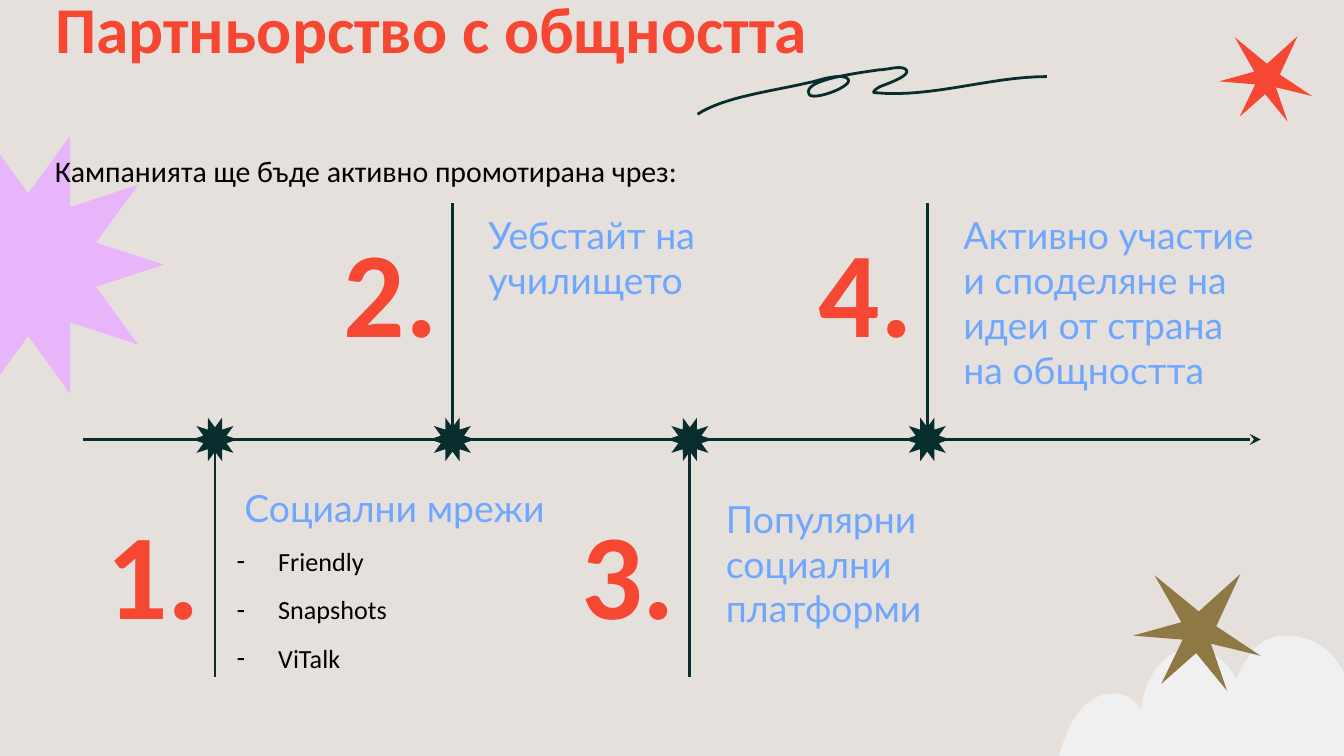
"""Build the community partnership slide with its four-step timeline."""
from dataclasses import dataclass
from math import cos, pi, sin

from lxml import etree
from pptx import Presentation
from pptx.dml.color import RGBColor
from pptx.enum import shapes, text
from pptx.oxml import ns
from pptx.util import Inches, Pt

Point = tuple[float, float]

RED, BLUE, DARK, BLACK = "F54731", "6FA7FF", "072E2D", "000000"
LILAC, CLOUD, OLIVE, SAND = "E8B4FA", "F0F0F0", "8E7945", "E6E0DC"
SLIDE_WIDTH = 10
AXIS_Y = 3.27
FIRST_X, STEP_X = 1.6, 5.3 / 3

SIX_POINT_STAR = [
    (0.80, 0), (0.49, 0.28), (0.16, 0.01), (0.36, 0.36), (0, 0.46), (0.37, 0.49),
    (0.21, 0.82), (0.47, 0.59), (0.70, 0.87), (0.58, 0.52), (0.95, 0.61), (0.62, 0.39),
]
CLOUD_CURVES = [
    (9.51, 4.73, 9.46, 4.74, 9.41, 4.77), (9.32, 4.82, 9.25, 4.94, 9.2, 5.05),
    (9.13, 4.91, 9, 4.83, 8.87, 4.83), (8.84, 4.83, 8.81, 4.83, 8.78, 4.84),
    (8.63, 4.89, 8.51, 5.07, 8.49, 5.28), (8.44, 5.2, 8.37, 5.16, 8.29, 5.16),
    (8.21, 5.16, 8.13, 5.19, 8.07, 5.25), (7.96, 5.36, 7.9, 5.53, 7.86, 5.71),
    (8.6, 5.71, 9.35, 5.71, 10.1, 5.71), (10.1, 5.57, 10.1, 5.43, 10.08, 5.29),
    (10.06, 5.14, 10.02, 5.01, 9.94, 4.91), (9.85, 4.8, 9.73, 4.74, 9.6, 4.73),
]
SQUIGGLE_CURVES = [
    (5.39, 0.72, 5.74, 0.68, 6.04, 0.61), (6.12, 0.59, 6.24, 0.55, 6.3, 0.58),
    (6.39, 0.63, 6.04, 0.76, 6.02, 0.7), (5.97, 0.6, 6.33, 0.55, 6.54, 0.52),
    (6.6, 0.52, 6.68, 0.49, 6.73, 0.51), (6.8, 0.55, 6.64, 0.61, 6.56, 0.64),
    (6.53, 0.65, 6.48, 0.69, 6.51, 0.69), (6.94, 0.73, 7.36, 0.57, 7.79, 0.57),
]


@dataclass
class Milestone:
    label: str
    label_top: float
    stem_end: float
    number_top: float
    label_gap: float = 0.17


MILESTONES = [
    Milestone("Социални мрежи", 3.51, 5.04, 3.61, 0.12),
    Milestone("Уебстайт на\nучилището", 1.48, 1.51, 1.51),
    Milestone("Популярни социални платформи", 3.59, 5.04, 3.61),
    Milestone("Активно участие\nи споделяне на идеи от страна на общността", 1.48, 1.51, 1.51),
]


def color(value: str) -> RGBColor:
    return RGBColor.from_string(value)


def star_points(x: float, y: float, outer: float, inner: float) -> list[Point]:
    radii = [inner, outer] * 10
    return [(x + r * sin(i * pi / 10), y - r * cos(i * pi / 10)) for i, r in enumerate(radii)]


def scaled_star(left: float, top: float, scale: float) -> list[Point]:
    return [(left + x * scale, top + y * scale) for x, y in SIX_POINT_STAR]


def curve_points(start: Point, curves: list[tuple], steps: int = 16) -> list[Point]:
    points = [start]
    for x1, y1, x2, y2, x3, y3 in curves:
        x0, y0 = points[-1]
        for i in range(1, steps + 1):
            t = i / steps
            a, b, c, d = (1 - t) ** 3, 3 * t * (1 - t) ** 2, 3 * t * t * (1 - t), t**3
            points.append((a * x0 + b * x1 + c * x2 + d * x3, a * y0 + b * y1 + c * y2 + d * y3))
    return points


def add_outline(slide, points: list[Point], fill: str | None = None, line: str | None = None):
    start, *rest = [(Inches(x), Inches(y)) for x, y in points]
    builder = slide.shapes.build_freeform(*start)
    builder.add_line_segments(rest, close=fill is not None)
    shape = builder.convert_to_shape()
    shape.shadow.inherit = False
    if fill:
        shape.fill.solid()
        shape.fill.fore_color.rgb = color(fill)
    else:
        shape.fill.background()
    if line:
        shape.line.color.rgb = color(line)
        shape.line.width = Pt(1.5)
    else:
        shape.line.fill.background()


def add_line(slide, start: Point, end: Point, arrow: bool = False):
    line = slide.shapes.add_connector(shapes.MSO_CONNECTOR.STRAIGHT, *map(Inches, start + end))
    line.line.color.rgb = color(DARK)
    line.line.width = Pt(1.5)
    properties = line._element.spPr
    if arrow:
        etree.SubElement(properties.find(ns.qn("a:ln")), ns.qn("a:tailEnd"), type="stealth")
    etree.SubElement(properties, ns.qn("a:effectLst"))


def place(shape, left: float, top: float, width: float, height: float):
    shape.left, shape.top = Inches(left), Inches(top)
    shape.width, shape.height = Inches(width), Inches(height)


def write(shape, content: str, size: float, font: str, hue: str, bold: bool = False,
          align=text.PP_ALIGN.LEFT, inset: float = 0.1, spaced: bool = False, bullet: str = ""):
    frame = shape.text_frame
    frame.text = content
    frame.word_wrap = True
    frame.auto_size = text.MSO_AUTO_SIZE.NONE
    frame.margin_left = frame.margin_right = Inches(0.1)
    frame.margin_top = frame.margin_bottom = Inches(inset)
    for paragraph in frame.paragraphs:
        paragraph.alignment = align
        if spaced:
            paragraph.line_spacing = 1.07
            paragraph.space_before, paragraph.space_after = Pt(0), Pt(8)
        if bullet:
            properties = paragraph._p.get_or_add_pPr()
            properties.set("marL", str(Inches(0.31)))
            properties.set("indent", str(Inches(-0.31)))
            etree.SubElement(properties, ns.qn("a:buChar"), char=bullet)
        paragraph.font.size = Pt(size)
        paragraph.font.name = font
        paragraph.font.bold = bold
        paragraph.font.color.rgb = color(hue)


def add_text(slide, box: tuple, content: str, *args, **options):
    write(slide.shapes.add_textbox(*map(Inches, box)), content, *args, **options)


def add_milestone(slide, index: int, milestone: Milestone):
    x = FIRST_X + index * STEP_X
    add_text(slide, (x - 0.95, milestone.number_top, 0.94, 1.11), f"{index + 1}.",
             65, "Calibri", RED, bold=True, align=text.PP_ALIGN.RIGHT)
    add_text(slide, (x + milestone.label_gap, milestone.label_top, 2.44, 0.87),
             milestone.label, 20, "Lato", BLUE)
    add_line(slide, (x, AXIS_Y), (x, milestone.stem_end))
    add_outline(slide, star_points(x, AXIS_Y, 0.17, 0.09), DARK)


def main():
    presentation = Presentation()
    presentation.slide_width = Inches(SLIDE_WIDTH)
    presentation.slide_height = Inches(SLIDE_WIDTH * 9 / 16)
    slide = presentation.slides.add_slide(presentation.slide_layouts[1])
    slide.background.fill.solid()
    slide.background.fill.fore_color.rgb = color(SAND)

    title, channels = slide.placeholders
    place(title, 0.31, -0.11, 8.43, 0.63)
    write(title, "Партньорство с общността", 35, "Calibri", RED, bold=True)
    title.text_frame.vertical_anchor = text.MSO_ANCHOR.MIDDLE
    place(channels, 1.66, 3.99, 5, 1.08)
    write(channels, "Friendly\nSnapshots\nViTalk", 14, "Calibri", BLACK,
          inset=0.05, spaced=True, bullet="-")

    add_outline(slide, star_points(0.21, 1.97, 1.01, 0.53), LILAC)
    add_outline(slide, curve_points((9.56, 4.73), CLOUD_CURVES), CLOUD)
    add_outline(slide, scaled_star(8.43, 4.27, 1), OLIVE)
    add_outline(slide, scaled_star(9.07, 0.27, 0.73), RED)
    add_outline(slide, curve_points((5.19, 0.85), SQUIGGLE_CURVES), line=DARK)

    add_line(slide, (0.62, AXIS_Y), (9.38, AXIS_Y), arrow=True)
    for index, milestone in enumerate(MILESTONES):
        add_milestone(slide, index, milestone)
    add_text(slide, (0.31, 1.07, 5, 0.39), "Кампанията ще бъде активно промотирана чрез:",
             16, "Calibri", BLACK, inset=0.05, spaced=True)
    presentation.save("out.pptx")


if __name__ == "__main__":
    main()
